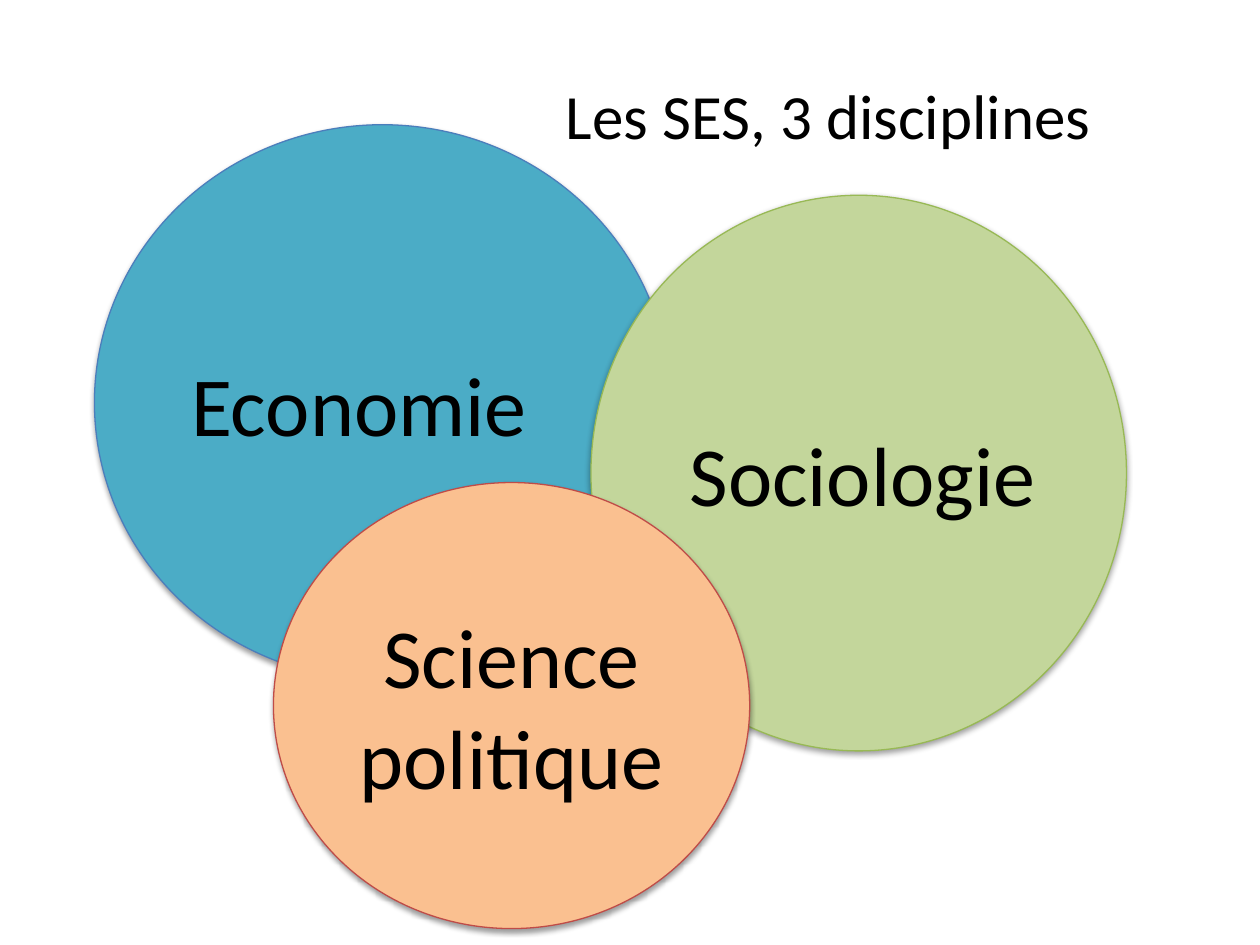
from dataclasses import dataclass

from lxml import etree
from pptx import Presentation
from pptx.dml.color import RGBColor
from pptx.enum.shapes import MSO_SHAPE
from pptx.enum.text import MSO_ANCHOR, MSO_AUTO_SIZE, PP_ALIGN
from pptx.oxml.ns import qn
from pptx.util import Inches, Pt

OVAL = MSO_SHAPE.OVAL
MIDDLE = MSO_ANCHOR.MIDDLE
FIT_SHAPE = MSO_AUTO_SIZE.SHAPE_TO_FIT_TEXT
LEFT, CENTER, RIGHT = PP_ALIGN.LEFT, PP_ALIGN.CENTER, PP_ALIGN.RIGHT


@dataclass(frozen=True)
class Theme:
    font: str = "Calibri"
    text: str = "000000"
    shadow: str = "000000"
    blue: tuple = ("4BACC6", "4B7EBC")
    green: tuple = ("C3D69B", "98B955")
    orange: tuple = ("FAC090", "BF4C48")
    title_size: int = 36
    label_size: int = 48
    outline: float = 0.75


class SlideBuilder:
    def __init__(self, page, theme):
        self.page = page
        self.theme = theme

    def set_text(self, frame, text, size, align):
        frame.text = text
        para = frame.paragraphs[0]
        para.alignment = align
        for span in para.runs:
            span.font.name = self.theme.font
            span.font.size = Pt(size)
            span.font.color.rgb = RGBColor.from_string(self.theme.text)

    def add_shadow(self, shape):
        shape.shadow.inherit = False
        effects = shape._element.spPr.find(qn("a:effectLst"))
        outer = etree.SubElement(
            effects, qn("a:outerShdw"), blurRad=str(Pt(3.15)),
            dist=str(Pt(1.57)), dir="5400000", rotWithShape="0")
        color = etree.SubElement(outer, qn("a:srgbClr"), val=self.theme.shadow)
        etree.SubElement(color, qn("a:alpha"), val="38000")

    def discipline(self, text, bounds, colors, align):
        circle = self.page.shapes.add_shape(OVAL, *map(Inches, bounds))
        fill, line = map(RGBColor.from_string, colors)
        circle.fill.solid()
        circle.fill.fore_color.rgb = fill
        circle.line.color.rgb = line
        circle.line.width = Pt(self.theme.outline)
        self.add_shadow(circle)
        circle.text_frame.vertical_anchor = MIDDLE
        self.set_text(circle.text_frame, text, self.theme.label_size, align)

    def title(self, text, bounds):
        box = self.page.shapes.add_textbox(*map(Inches, bounds))
        box.text_frame.word_wrap = False
        box.text_frame.auto_size = FIT_SHAPE
        self.set_text(box.text_frame, text, self.theme.title_size, LEFT)


def main():
    deck = Presentation()
    deck.slide_width, deck.slide_height = Inches(10), Inches(7.5)
    theme = Theme()
    builder = SlideBuilder(deck.slides.add_slide(deck.slide_layouts[6]), theme)
    builder.discipline("Economie", (0.75, 0.99, 4.57, 4.41), theme.blue, LEFT)
    builder.discipline("Sociologie", (4.69, 1.55, 4.25, 4.41), theme.green, RIGHT)
    builder.discipline("Science politique", (2.17, 3.83, 3.78, 3.54), theme.orange, CENTER)
    builder.title("Les SES, 3 disciplines", (4.39, 0.56, 4.41, 0.71))
    deck.save("out.pptx")


if __name__ == "__main__":
    main()
